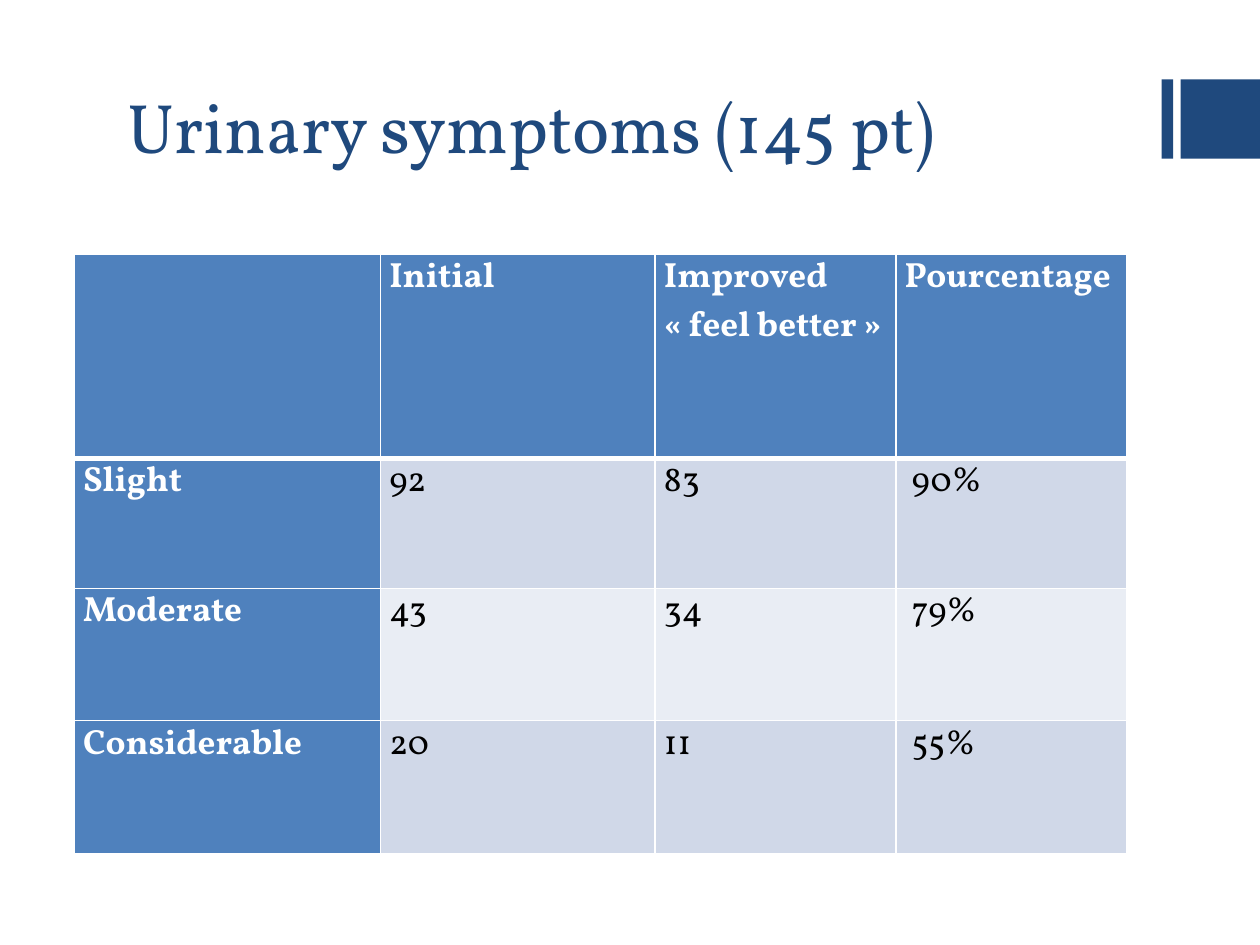
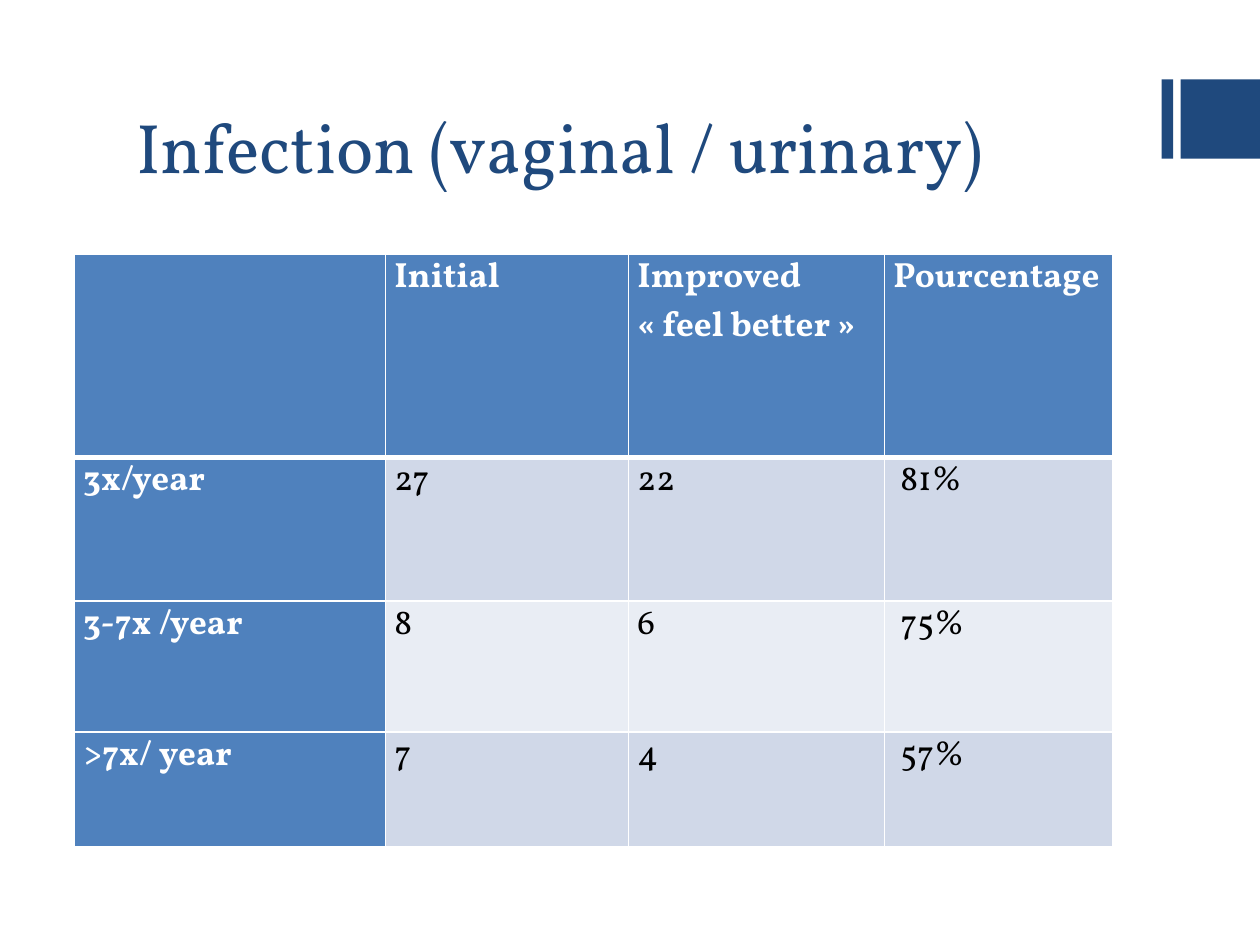
from dataclasses import dataclass

from lxml.etree import SubElement
from pptx import Presentation
from pptx.dml.color import RGBColor
from pptx.enum.shapes import MSO_SHAPE
from pptx.enum.text import MSO_ANCHOR, MSO_AUTO_SIZE, PP_ALIGN
from pptx.oxml.ns import qn
from pptx.slide import Slide
from pptx.table import _Cell as Cell
from pptx.text.text import TextFrame
from pptx.util import Inches, Pt

COLORS = {
    "navy": "1F497D",
    "blue": "4F81BD",
    "odd_row": "D0D8E8",
    "even_row": "E9EDF4",
    "white": "FFFFFF",
    "black": "000000",
}
FONT = "Vollkorn"
TITLE_ONLY_LAYOUT = 5

# Shared formats
TITLE_FRAME = {
    "vertical_anchor": MSO_ANCHOR.BOTTOM,
    "auto_size": MSO_AUTO_SIZE.NONE,
    "word_wrap": True,
}
CELL_MARGINS = {
    "margin_left": Inches(0.07),
    "margin_right": Inches(0.07),
    "margin_top": 0,
    "margin_bottom": 0,
}
TITLE_FONT = {"name": FONT, "size": Pt(40), "bold": False}
HEADING_FONT = {"name": FONT, "size": Pt(20), "bold": True}
VALUE_FONT = {**HEADING_FONT, "bold": False}

# Wording and places
HEADINGS = ("", "Initial", "Improved\n« feel better »", "Pourcentage")


@dataclass(frozen=True)
class Box:
    left: float
    top: float
    width: float
    height: float


@dataclass(frozen=True)
class ResultSlide:
    title: str
    title_box: Box
    column_widths: tuple[float, ...]
    row_heights: tuple[float, ...]
    results: tuple[tuple[str, ...], ...]


BANDS = (Box(9.22, 0.63, 0.09, 0.63), Box(9.37, 0.63, 0.63, 0.63))
TABLE_LEFT, TABLE_TOP = 0.59, 2.02

RESULT_SLIDES = (
    ResultSlide(
        "Urinary symptoms (145 pt)",
        Box(0.91, 0.36, 8, 1.02),
        (2.43, 2.18, 1.91, 1.83),
        (1.62, 1.03, 1.05, 1.06),
        (
            ("Slight", "92", "83", " 90%"),
            ("Moderate", "43", "34", " 79%"),
            ("Considerable", "20", "11", " 55%"),
        ),
    ),
    ResultSlide(
        "Infection (vaginal / urinary)",
        Box(0.98, 0.36, 8, 1.18),
        (2.47, 1.93, 2.03, 1.81),
        (1.61, 1.14, 1.04, 0.91),
        (
            ("3x/year", "27", "22", " 81%"),
            ("3-7x /year", "8", "6", " 75%"),
            (">7x/ year", "7", "4", " 57%"),
        ),
    ),
)


def color(name: str) -> RGBColor:
    return RGBColor.from_string(COLORS[name])


def apply_format(target: object, values: dict) -> None:
    for attribute, value in values.items():
        setattr(target, attribute, value)


def box_lengths(box: Box) -> tuple[int, ...]:
    return tuple(Inches(n) for n in (box.left, box.top, box.width, box.height))


def format_text(frame: TextFrame, font: dict, color_name: str) -> None:
    for paragraph in frame.paragraphs:
        paragraph.alignment = PP_ALIGN.LEFT
        for run in paragraph.runs:
            apply_format(run.font, font)
            run.font.color.rgb = color(color_name)


def add_bands(slide: Slide) -> None:
    for band in BANDS:
        shape = slide.shapes.add_shape(MSO_SHAPE.RECTANGLE, *box_lengths(band))
        shape.shadow.inherit = False
        shape.fill.solid()
        shape.fill.fore_color.rgb = color("navy")
        shape.line.fill.background()


def set_title(slide: Slide, text: str, box: Box) -> None:
    title = slide.shapes.title
    names = ("left", "top", "width", "height")
    apply_format(title, dict(zip(names, box_lengths(box))))
    title.text_frame.text = text
    apply_format(title.text_frame, TITLE_FRAME)
    format_text(title.text_frame, TITLE_FONT, "navy")


def set_borders(cell: Cell, top: int, bottom: int) -> None:
    """Draw white borders; the fill must follow them in the cell's XML."""
    properties = cell._tc.get_or_add_tcPr()
    for tag, points in (("lnL", 1), ("lnR", 1), ("lnT", top), ("lnB", bottom)):
        line = SubElement(properties, qn(f"a:{tag}"), w=str(Pt(points)))
        fill = SubElement(line, qn("a:solidFill"))
        SubElement(fill, qn("a:srgbClr"), val=COLORS["white"])


def fill_cell(cell: Cell, text: str, row: int, column: int) -> None:
    is_heading = row == 0 or column == 0
    band_color = "odd_row" if row % 2 else "even_row"
    set_borders(cell, top=3 if row == 1 else 1, bottom=3 if row == 0 else 1)
    cell.fill.solid()
    cell.fill.fore_color.rgb = color("blue" if is_heading else band_color)
    apply_format(cell, CELL_MARGINS)
    cell.text = text
    format_text(
        cell.text_frame,
        HEADING_FONT if is_heading else VALUE_FONT,
        "white" if is_heading else "black",
    )


def add_result_table(slide: Slide, content: ResultSlide) -> None:
    widths, heights = content.column_widths, content.row_heights
    box = Box(TABLE_LEFT, TABLE_TOP, sum(widths), sum(heights))
    table = slide.shapes.add_table(
        len(heights), len(widths), *box_lengths(box)
    ).table
    for table_column, width in zip(table.columns, widths):
        table_column.width = Inches(width)
    for table_row, height in zip(table.rows, heights):
        table_row.height = Inches(height)
    for row, texts in enumerate((HEADINGS, *content.results)):
        for column, text in enumerate(texts):
            fill_cell(table.cell(row, column), text, row, column)


def main() -> None:
    presentation = Presentation()
    presentation.slide_width = Inches(10)
    presentation.slide_height = Inches(7.5)
    layout = presentation.slide_layouts[TITLE_ONLY_LAYOUT]
    for content in RESULT_SLIDES:
        slide = presentation.slides.add_slide(layout)
        add_bands(slide)
        set_title(slide, content.title, content.title_box)
        add_result_table(slide, content)
    presentation.save("out.pptx")


if __name__ == "__main__":
    main()
